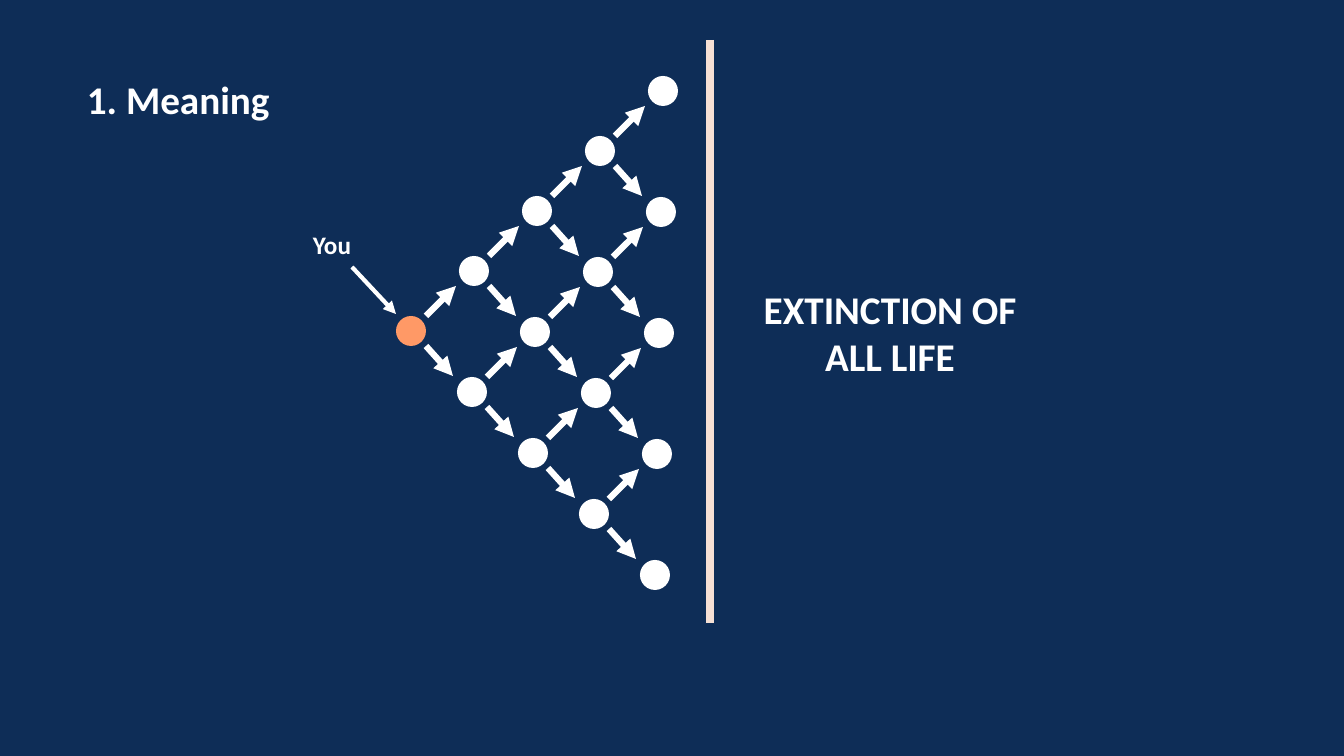
from dataclasses import dataclass

from lxml.etree import SubElement
from pptx import Presentation
from pptx.dml.color import RGBColor
from pptx.enum.shapes import MSO_CONNECTOR, MSO_SHAPE
from pptx.enum.text import MSO_AUTO_SIZE, PP_ALIGN
from pptx.oxml.ns import qn
from pptx.util import Emu, Pt

SLIDE_WIDTH, SLIDE_HEIGHT = 1344, 756
EMU_PER_PX = 12192000 / SLIDE_WIDTH

GENERATIONS = 5
NODE_SIZE = 30
ROOT = (396, 316)
UP_STEP, DOWN_STEP = (63, -60), (61, 61)
UP_ARROW, DOWN_ARROW = (30, -30), (27, 30)


@dataclass(frozen=True)
class Theme:
    font: str = "Calibri"
    background: str = "0E2D57"
    light: str = "FFFFFF"
    you: str = "FF9966"
    wall: str = "F5E0D5"
    heading_size: int = 28
    label_size: int = 18
    arrow_weight: float = 4.5
    pointer_weight: int = 3
    wall_weight: int = 6


THEME = Theme()


def px(length):
    return Emu(round(length * EMU_PER_PX))


def rgb(color):
    return RGBColor.from_string(color)


def add_label(page, text, left, top, width, height, size, align=PP_ALIGN.LEFT):
    box = page.shapes.add_textbox(px(left), px(top), px(width), px(height))
    frame = box.text_frame
    frame.word_wrap = True
    frame.auto_size = MSO_AUTO_SIZE.SHAPE_TO_FIT_TEXT
    para = frame.paragraphs[0]
    para.alignment = align
    span = para.add_run()
    span.text = text
    span.font.name = THEME.font
    span.font.size = Pt(size)
    span.font.bold = True
    span.font.color.rgb = rgb(THEME.light)


def add_line(page, start, end, color, weight, arrow=False):
    line = page.shapes.add_connector(
        MSO_CONNECTOR.STRAIGHT, *(px(value) for value in (*start, *end)))
    line.line.color.rgb = rgb(color)
    line.line.width = Pt(weight)
    if arrow:
        SubElement(line.line._get_or_add_ln(), qn("a:tailEnd"), type="triangle")
    SubElement(line._element.spPr, qn("a:effectLst"))


def add_node(page, left, top, color):
    node = page.shapes.add_shape(
        MSO_SHAPE.OVAL, px(left), px(top), px(NODE_SIZE), px(NODE_SIZE))
    node.shadow.inherit = False
    node.fill.solid()
    node.fill.fore_color.rgb = rgb(color)
    node.line.fill.background()


def add_branches(page, left, top):
    """Draw the rising and the falling arrow that leave a node."""
    right = left + NODE_SIZE
    for y, (run, rise) in ((top, UP_ARROW), (top + NODE_SIZE, DOWN_ARROW)):
        add_line(page, (right, y), (right + run, y + rise),
                 THEME.light, THEME.arrow_weight, arrow=True)


def add_lattice(page):
    """Place each node by its number of upward and downward steps from the root."""
    for generation in range(GENERATIONS):
        for downs in range(generation + 1):
            ups = generation - downs
            left, top = (origin + ups * up + downs * down for origin, up, down
                         in zip(ROOT, UP_STEP, DOWN_STEP))
            add_node(page, left, top, THEME.light if generation else THEME.you)
            if generation < GENERATIONS - 1:
                add_branches(page, left, top)


def main():
    deck = Presentation()
    deck.slide_width, deck.slide_height = px(SLIDE_WIDTH), px(SLIDE_HEIGHT)
    page = deck.slides.add_slide(deck.slide_layouts[6])
    page.background.fill.solid()
    page.background.fill.fore_color.rgb = rgb(THEME.background)

    add_label(page, "1. Meaning", 77, 70, 1014, 57, THEME.heading_size)
    add_lattice(page)
    add_line(page, (710, 40), (710, 623), THEME.wall, THEME.wall_weight)
    add_label(page, "EXTINCTION OF ALL LIFE", 725, 280, 330, 105,
              THEME.heading_size, PP_ALIGN.CENTER)
    add_label(page, "You", 276, 224, 112, 40, THEME.label_size, PP_ALIGN.CENTER)
    add_line(page, (352, 267), (396, 314), THEME.light, THEME.pointer_weight, arrow=True)
    deck.save("out.pptx")


if __name__ == "__main__":
    main()
